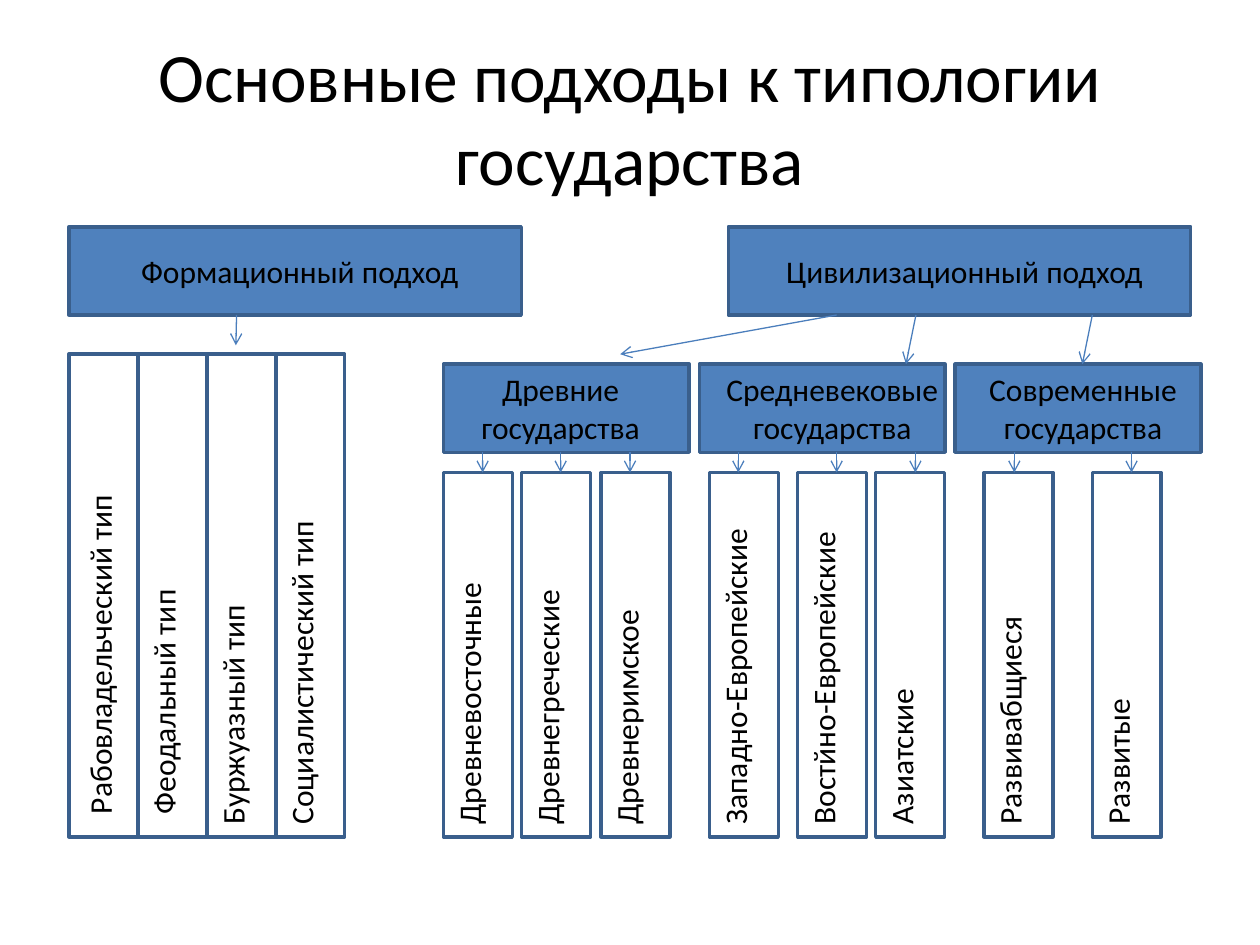
from pptx import Presentation
from pptx.dml.color import RGBColor
from pptx.enum.shapes import MSO_CONNECTOR, MSO_SHAPE
from pptx.enum.text import MSO_ANCHOR, MSO_AUTO_SIZE, PP_ALIGN
from pptx.oxml.ns import qn
from pptx.util import Pt
from lxml import etree

RECT = MSO_SHAPE.RECTANGLE
LINE = MSO_CONNECTOR.STRAIGHT
MID = MSO_ANCHOR.MIDDLE
TOP = MSO_ANCHOR.TOP
LEFT = PP_ALIGN.LEFT
CENTER = PP_ALIGN.CENTER
FIXED = MSO_AUTO_SIZE.NONE

HUES = {"ink": "000000", "fill": "4F81BD", "edge": "3A5F8C",
        "arrow": "4B7EBC", "white": "FFFFFF"}
FONT = "Calibri"

COL = 39.4
FLOOR = 478.2
HEAD_TOP, HEAD_TALL = 129.6, 50.4
HEAD_END = HEAD_TOP + HEAD_TALL
TYPE_TOP = 202.4
ERA_LEFT, ERA_STEP, ERA_WIDE, ERA_TOP = 253.4, 146.2, 140.4, 208.1
ERA_END = ERA_TOP + HEAD_TALL
LEAF_TOP = 270

HEADS = [
    ("Формационный подход", 39.4, 258.5, 44.6, 253.4),
    ("Цивилизационный подход", 416.2, 264.2, 410.4, 281.5),
]
TYPES = [
    ("Рабовладельческий тип", 3, 472.3),
    ("Феодальный тип", 0, 472.3),
    ("Буржуазный тип", 0, FLOOR),
    ("Социалистический тип", 0, FLOOR),
]
ERAS = [
    ("Древние государства", 258.5, 123.8),
    ("Средневековые государства", 405.4, 140.4),
    ("Современные государства", 545.8, 146.2),
]
LEAVES = [
    ("Древневосточные", 253.4, 275.8),
    ("Древнегреческие", 298.1, 320.4),
    ("Древнеримское", 343.4, 360),
    ("Западно-Европейские", 405.4, 421.9),
    ("Востйно-Европейские", 455.8, 478.1),
    ("Азиатские", 500.4, 523.1),
    ("Развивабщиеся", 562.3, 579.6),
    ("Развитые", 624.2, 646.6),
]
LINKS = [
    (135.2, 134.8, 197.3),
    (478.1, 354.4, TYPE_TOP),
    (523.4, 517.7, ERA_TOP),
    (624.2, 618.5, ERA_TOP),
]


def tint(name):
    return RGBColor.from_string(HUES[name])


def write(frame, text, size=18, align=LEFT, anchor=TOP, hue="ink"):
    frame.word_wrap = True
    frame.auto_size = FIXED
    frame.vertical_anchor = anchor
    par = frame.paragraphs[0]
    par.alignment = align
    run = par.add_run()
    run.text = text
    run.font.name = FONT
    run.font.size = Pt(size)
    run.font.color.rgb = tint(hue)


class Board:
    def __init__(self, slide):
        self.slide = slide
        self.edge = 2
        self.thin = 0.75

    def title(self, text, x, y, w, h):
        shape = self.slide.shapes.title
        shape.left, shape.top, shape.width, shape.height = map(Pt, (x, y, w, h))
        write(shape.text_frame, text, size=39.6, align=CENTER, anchor=MID)

    def box(self, x, y, w, h, hue="fill"):
        shape = self.slide.shapes.add_shape(RECT, *map(Pt, (x, y, w, h)))
        shape.shadow.inherit = False
        shape.fill.solid()
        shape.fill.fore_color.rgb = tint(hue)
        shape.line.color.rgb = tint("edge")
        shape.line.width = Pt(self.edge)

    def label(self, text, x, y, w, h, **style):
        shape = self.slide.shapes.add_textbox(*map(Pt, (x, y, w, h)))
        write(shape.text_frame, text, **style)
        return shape

    def rising(self, text, x, end):
        shape = self.label(text, x, end - 258.5, 36, 258.5)
        shape.element.find(".//" + qn("a:bodyPr")).set("vert", "vert270")

    def arrow(self, x1, y1, x2, y2):
        link = self.slide.shapes.add_connector(LINE, *map(Pt, (x1, y1, x2, y2)))
        link.line.color.rgb = tint("arrow")
        link.line.width = Pt(self.thin)
        line = link.line._get_or_add_ln()
        etree.SubElement(line, qn("a:tailEnd"), type="arrow")
        etree.SubElement(link.element.spPr, qn("a:effectLst"))


def main():
    deck = Presentation()
    deck.slide_width, deck.slide_height = Pt(720), Pt(540)
    board = Board(deck.slides.add_slide(deck.slide_layouts[5]))
    board.title("Основные подходы к типологии государства", 36, 21.6, 648, 90)

    for text, x, wide, left, span in HEADS:
        board.box(x, HEAD_TOP, wide, HEAD_TALL)
        board.label(text, left, 140.4, span, 29, align=CENTER)

    for i, (text, shift, end) in enumerate(TYPES):
        x = COL * (i + 1)
        board.box(x, TYPE_TOP, COL, FLOOR - TYPE_TOP, "white")
        board.rising(text, x + shift, end)

    for i, (text, left, span) in enumerate(ERAS):
        board.box(ERA_LEFT + ERA_STEP * i, ERA_TOP, ERA_WIDE, HEAD_TALL)
        board.label(text, left, ERA_TOP, span, 51, align=CENTER)

    for text, x, mid in LEAVES:
        board.box(x, LEAF_TOP, COL, FLOOR - LEAF_TOP, "white")
        board.rising(text, x, FLOOR)
        board.arrow(mid, ERA_END, mid, LEAF_TOP)

    for start, stop, end in LINKS:
        board.arrow(start, HEAD_END, stop, end)

    deck.save("out.pptx")


if __name__ == "__main__":
    main()
